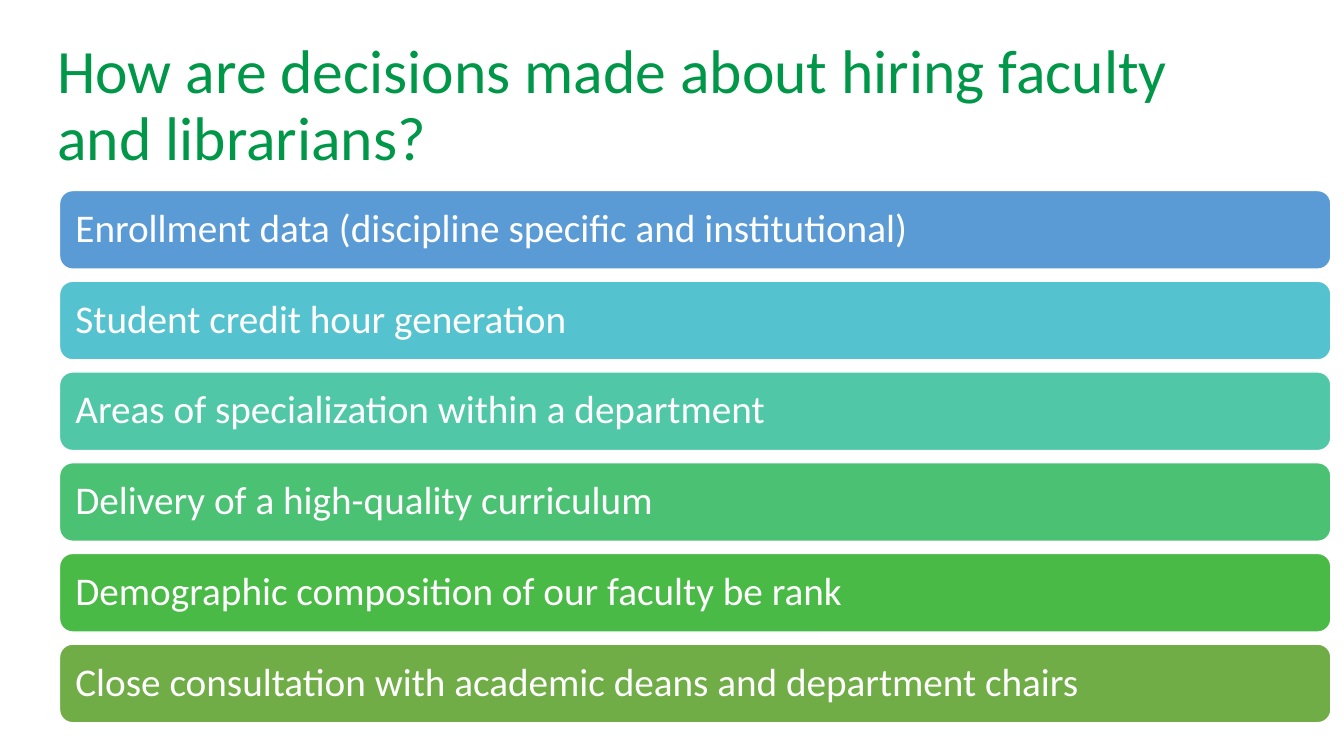
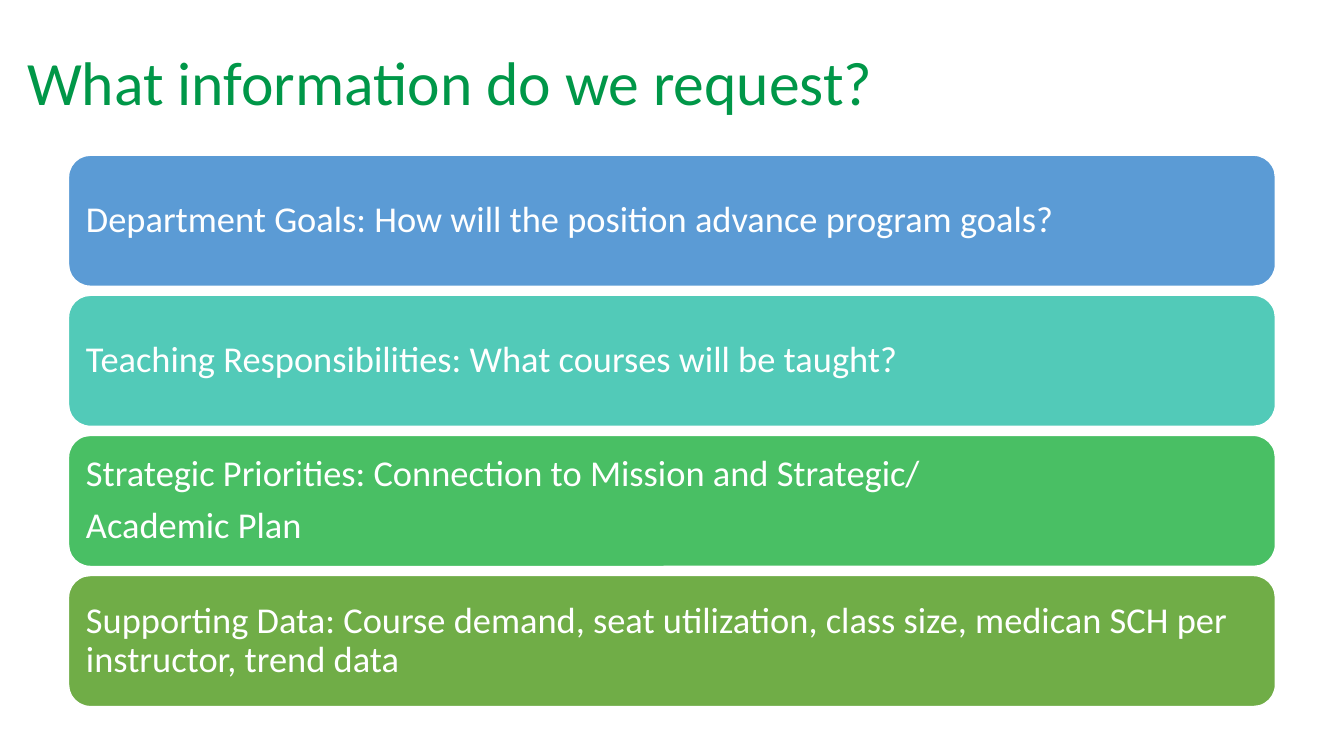
from pptx import Presentation
from pptx.dml.color import RGBColor
from pptx.enum.shapes import MSO_SHAPE as Preset
from pptx.enum.text import MSO_ANCHOR as Anchor, PP_ALIGN as Align
from pptx.util import Inches, Pt

FONT = "Calibri"
TITLE_GREEN = "009748"
WHITE = "FFFFFF"
TITLE_SIZE = 44

HIRING_FACTORS = [
    ("Enrollment data (discipline specific and institutional)", "5B9BD5"),
    ("Student credit hour generation", "55C3CF"),
    ("Areas of specialization within a department", "50C8A7"),
    ("Delivery of a high-quality curriculum", "4BC174"),
    ("Demographic composition of our faculty be rank", "4ABA46"),
    ("Close consultation with academic deans and department chairs", "70AD47"),
]
REQUESTED_INFORMATION = [
    ("Department Goals: How will the position advance program goals?", "5B9BD5"),
    ("Teaching Responsibilities: What courses will be taught?", "52CAB8"),
    ("Strategic Priorities: Connection to Mission and Strategic/\nAcademic Plan", "49BF64"),
    ("Supporting Data: Course demand, seat utilization, class size, "
     "medican SCH per instructor, trend data", "70AD47"),
]


def color(hex_code):
    return RGBColor.from_string(hex_code)


def write(frame, text, size, hex_code, space_after=0):
    frame.text = text
    frame.word_wrap = True
    frame.vertical_anchor = Anchor.MIDDLE
    for paragraph in frame.paragraphs:
        paragraph.alignment = Align.LEFT
        paragraph.line_spacing = 0.9
        paragraph.space_after = Pt(space_after)
        for run in paragraph.runs:
            run.font.name = FONT
            run.font.size = Pt(size)
            run.font.color.rgb = color(hex_code)


def add_title(slide, text, left, top, width, height):
    title = slide.shapes.add_textbox(*map(Inches, (left, top, width, height)))
    write(title.text_frame, text, TITLE_SIZE, TITLE_GREEN)


def add_bar(slide, text, fill, left, top, width, height, size, inset):
    bar = slide.shapes.add_shape(
        Preset.ROUNDED_RECTANGLE, *map(Inches, (left, top, width, height)))
    bar.shadow.inherit = False
    bar.fill.solid()
    bar.fill.fore_color.rgb = color(fill)
    bar.line.color.rgb = color(WHITE)
    bar.line.width = Pt(1)
    frame = bar.text_frame
    frame.margin_left = frame.margin_right = Inches(inset)
    frame.margin_top = frame.margin_bottom = Inches(inset)
    write(frame, text, size, WHITE, space_after=size * 0.35)


def add_bar_list(slide, items, left, top, width, height, pitch, size, inset):
    for index, (text, fill) in enumerate(items):
        add_bar(slide, text, fill, left, top + index * pitch, width, height, size, inset)


def main():
    deck = Presentation()
    deck.slide_width = Inches(13.33)
    deck.slide_height = Inches(7.5)
    blank = deck.slide_layouts[6]

    hiring = deck.slides.add_slide(blank)
    add_title(hiring, "How are decisions made about hiring faculty and librarians?",
              0.47, 0.29, 11.95, 1.54)
    add_bar_list(hiring, HIRING_FACTORS, left=0.59, top=1.89, width=12.61,
                 height=0.78, pitch=0.9, size=28, inset=0.12)

    request = deck.slides.add_slide(blank)
    add_title(request, "What information do we request?", 0.17, 0.25, 12.72, 1.2)
    add_bar_list(request, REQUESTED_INFORMATION, left=0.68, top=1.54, width=11.97,
                 height=1.3, pitch=1.39, size=26, inset=0.11)

    deck.save("out.pptx")


if __name__ == "__main__":
    main()
